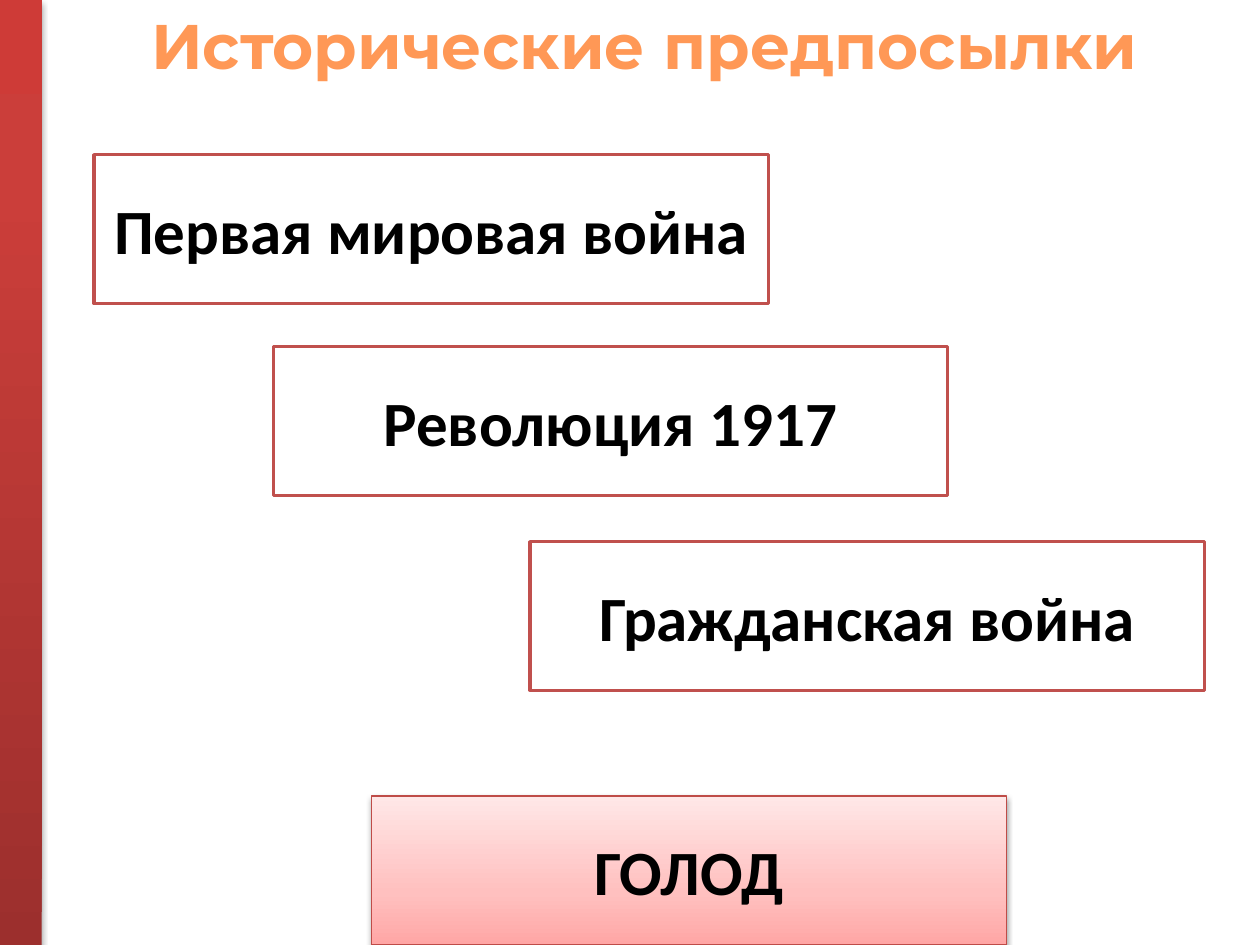
from dataclasses import dataclass
from typing import Any

from lxml.etree import SubElement as Sub
from pptx import Presentation
from pptx.dml.color import RGBColor as Rgb
from pptx.enum.shapes import MSO_SHAPE as Kind
from pptx.enum.text import MSO_ANCHOR as Anchor, MSO_AUTO_SIZE as Auto, PP_ALIGN as Align
from pptx.oxml.ns import qn
from pptx.util import Cm, Pt

HEX = {
    "white": "FFFFFF", "black": "000000", "red": "C0504D", "edge": "BF4C48",
    "bar0": "9C2F2D", "bar1": "CB3E3A", "bar2": "CE3B37",
    "pink0": "FFA6A5", "pink1": "FFC0BF", "pink2": "FFE7E7",
    "head0": "9D4700", "head1": "FF9856", "head2": "FFF5F1",
}
BOLD = {"size": Pt(36), "bold": True}
WIDE, TALL = 25.4, 19.05
BOX_W, BOX_H = 13.59, 3

Stops = list[tuple[int, str]]


@dataclass
class Box:
    left: float
    top: float
    width: float
    height: float
    text: str = ""
    fill: str = "white"
    line: str = ""
    weight: float = 2
    stops: Stops | None = None
    shade: int = 0


def blend(fill: Any, host: Any, stops: Stops, angle: int) -> None:
    fill.gradient()
    fill.gradient_angle = angle
    ramp = host.find(".//" + qn("a:gsLst"))
    for old in list(ramp):
        ramp.remove(old)
    for pos, name in stops:
        stop = Sub(ramp, qn("a:gs"), pos=str(pos * 1000))
        Sub(stop, qn("a:srgbClr"), val=HEX[name])


def cast(shape: Any, alpha: int) -> None:
    effect = shape._element.spPr.find(qn("a:effectLst"))
    outer = Sub(effect, qn("a:outerShdw"), blurRad="40000", dist="22000",
                dir="5400000", rotWithShape="0")
    color = Sub(outer, qn("a:srgbClr"), val=HEX["black"])
    Sub(color, qn("a:alpha"), val=str(alpha * 1000))


def write(frame: Any, text: str, face: str) -> Any:
    para = frame.paragraphs[0]
    para.alignment = Align.CENTER
    run = para.add_run()
    run.text = text
    for key, value in {**BOLD, "name": face}.items():
        setattr(run.font, key, value)
    return run


def draw(slide: Any, box: Box) -> None:
    shape = slide.shapes.add_shape(
        Kind.RECTANGLE, Cm(box.left), Cm(box.top), Cm(box.width), Cm(box.height))
    shape.shadow.inherit = False
    if box.stops:
        blend(shape.fill, shape._element.spPr, box.stops, 90)
    else:
        shape.fill.solid()
        shape.fill.fore_color.rgb = Rgb.from_string(HEX[box.fill])
    if box.line:
        shape.line.color.rgb = Rgb.from_string(HEX[box.line])
        shape.line.width = Pt(box.weight)
    else:
        shape.line.fill.background()
    if box.shade:
        cast(shape, box.shade)
    if box.text:
        frame = shape.text_frame
        frame.word_wrap = True
        frame.vertical_anchor = Anchor.MIDDLE
        run = write(frame, box.text, "Calibri")
        run.font.color.rgb = Rgb.from_string(HEX["black"])


def title(slide: Any, text: str) -> None:
    shape = slide.shapes.add_textbox(Cm(2.46), Cm(0), Cm(21.06), Cm(1.8))
    frame = shape.text_frame
    frame.word_wrap = False
    frame.auto_size = Auto.SHAPE_TO_FIT_TEXT
    run = write(frame, text, "Montserrat")
    blend(run.font.fill, run._r, [(0, "head0"), (78, "head1"), (100, "head2")], 270)


def main() -> None:
    deck = Presentation()
    deck.slide_width, deck.slide_height = Cm(WIDE), Cm(TALL)
    slide = deck.slides.add_slide(deck.slide_layouts[6])
    draw(slide, Box(0, 0, 0.84, TALL, shade=35,
                    stops=[(0, "bar0"), (80, "bar1"), (100, "bar2")]))
    title(slide, "Исторические предпосылки")
    causes = [
        (1.9, 3.12, "Первая мировая война"),
        (5.51, 6.99, "Революция 1917"),
        (10.69, 10.92, "Гражданская война"),
    ]
    for left, top, text in causes:
        draw(slide, Box(left, top, BOX_W, BOX_H, text, line="red"))
    draw(slide, Box(7.49, TALL - BOX_H, 12.8, BOX_H, "ГОЛОД", line="edge",
                    weight=0.75, shade=38,
                    stops=[(0, "pink0"), (35, "pink1"), (100, "pink2")]))
    deck.save("out.pptx")


if __name__ == "__main__":
    main()
